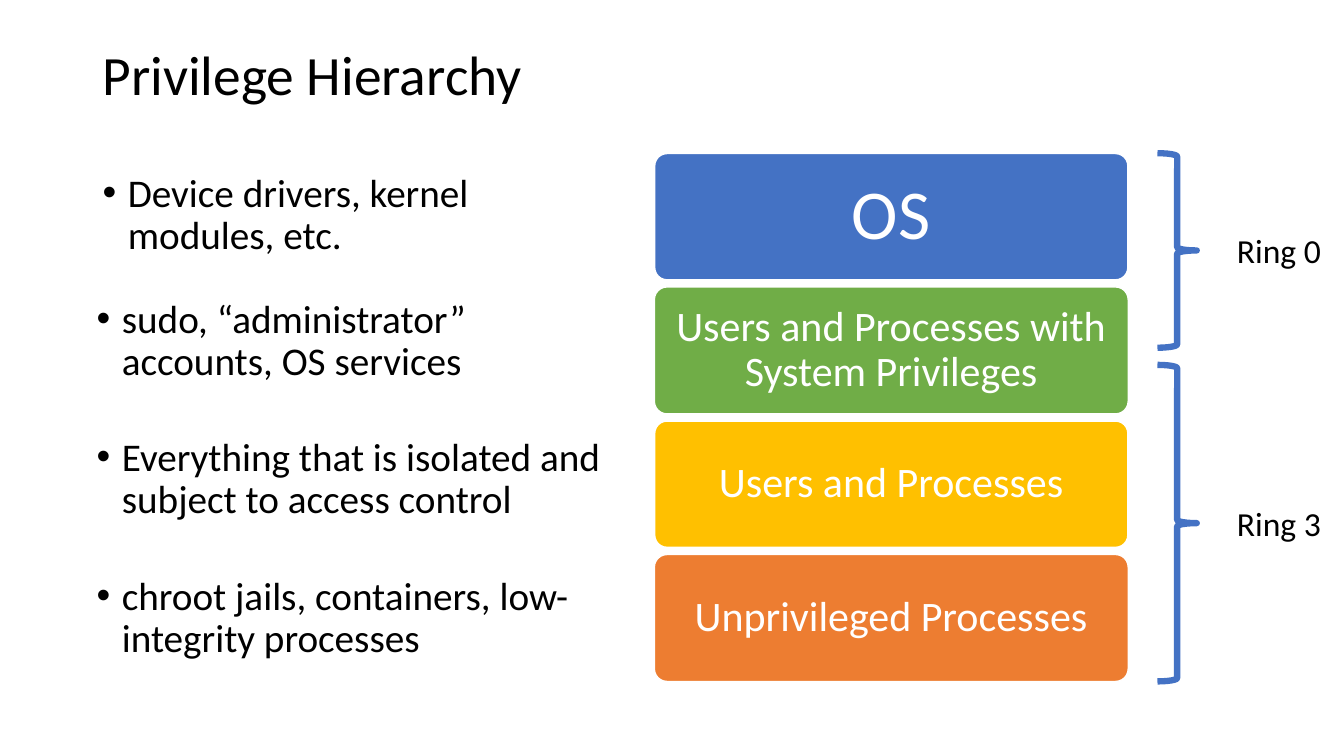
from lxml import etree
from pptx import Presentation
from pptx.dml.color import RGBColor
from pptx.enum.shapes import MSO_SHAPE
from pptx.enum.text import MSO_ANCHOR, PP_ALIGN
from pptx.oxml.ns import qn
from pptx.util import Inches, Pt

ROUND, BRACE = MSO_SHAPE.ROUNDED_RECTANGLE, MSO_SHAPE.RIGHT_BRACE
TOP, MIDDLE = MSO_ANCHOR.TOP, MSO_ANCHOR.MIDDLE
LEFT, CENTER = PP_ALIGN.LEFT, PP_ALIGN.CENTER

FONT = "Calibri"
COLORS = {"black": "000000", "white": "FFFFFF", "blue": "4472C4",
          "green": "70AD47", "gold": "FFC000", "orange": "ED7D31"}

TITLE = "Privilege Hierarchy"
# label, fill, text size, inset, outline width
LEVELS = [
    ("OS", "blue", 50, 0.21, 1.5),
    ("Users and Processes with System Privileges", "green", 30, 0.12, 1),
    ("Users and Processes", "gold", 30, 0.12, 1.5),
    ("Unprivileged Processes", "orange", 30, 0.12, 1),
]
# text, left, top
NOTES = [
    ("Device drivers, kernel modules, etc.", 0.92, 1.67),
    ("sudo, “administrator” accounts, OS services", 0.86, 2.92),
    ("Everything that is isolated and subject to access control", 0.86, 4.29),
    ("chroot jails, containers, low-integrity processes", 0.86, 5.67),
]
# label, brace top, brace height
RINGS = [("Ring 0", 1.52, 1.93), ("Ring 3", 3.62, 3.14)]

STACK_X, STACK_Y, STACK_W = 6.49, 1.52, 4.7
LEVEL_H, PITCH = 1.26, 1.327
BRACE_X, BRACE_W = 11.48, 0.39
RING_X, RING_W, RING_H = 12.17, 1.04, 0.5


def color(name):
    return RGBColor.from_string(COLORS[name])


def write(shape, text, size, tint="black", align=LEFT, anchor=TOP,
          wrap=True, spacing=0.9):
    frame = shape.text_frame
    frame.text = text
    frame.word_wrap = wrap
    frame.vertical_anchor = anchor
    para = frame.paragraphs[0]
    para.alignment = align
    para.line_spacing = spacing
    font = para.runs[0].font
    font.name, font.size = FONT, Pt(size)
    font.color.rgb = color(tint)
    return para


def add_box(slide, left, top, width, height):
    return slide.shapes.add_textbox(
        Inches(left), Inches(top), Inches(width), Inches(height))


def add_form(slide, kind, left, top, width, height, line, weight):
    form = slide.shapes.add_shape(
        kind, Inches(left), Inches(top), Inches(width), Inches(height))
    form.shadow.inherit = False
    form.line.color.rgb = color(line)
    form.line.width = Pt(weight)
    return form


def add_level(slide, row, label, fill, size, inset, weight):
    form = add_form(slide, ROUND, STACK_X, STACK_Y + row * PITCH,
                    STACK_W, LEVEL_H, "white", weight)
    form.adjustments[0] = 0.1
    form.fill.solid()
    form.fill.fore_color.rgb = color(fill)
    write(form, label, size, "white", CENTER, MIDDLE)
    frame = form.text_frame
    frame.margin_left = frame.margin_right = Inches(inset)
    frame.margin_top = frame.margin_bottom = Inches(inset)


def add_ring(slide, label, top, height):
    brace = add_form(slide, BRACE, BRACE_X, top, BRACE_W, height, "blue", 4.5)
    brace.fill.background()
    middle = top + height / 2
    box = add_box(slide, RING_X, middle - RING_H / 2, RING_W, RING_H)
    write(box, label, 24, wrap=False, spacing=1.0)


def add_note(slide, text, left, top):
    para = write(add_box(slide, left, top, 5.28, 1.07), text, 28)
    para.space_before = Pt(10)
    props = para._p.get_or_add_pPr()
    props.set("marL", str(Inches(0.25)))
    props.set("indent", str(-Inches(0.25)))
    etree.SubElement(props, qn("a:buFont")).set("typeface", "Arial")
    etree.SubElement(props, qn("a:buChar")).set("char", "•")


def main():
    deck = Presentation()
    deck.slide_width, deck.slide_height = Inches(13.33), Inches(7.5)
    slide = deck.slides.add_slide(deck.slide_layouts[6])
    write(add_box(slide, 0.92, 0.4, 11.5, 0.73), TITLE, 39.6, anchor=MIDDLE)
    for row, level in enumerate(LEVELS):
        add_level(slide, row, *level)
    for ring in RINGS:
        add_ring(slide, *ring)
    for note in NOTES:
        add_note(slide, *note)
    deck.save("out.pptx")


if __name__ == "__main__":
    main()
